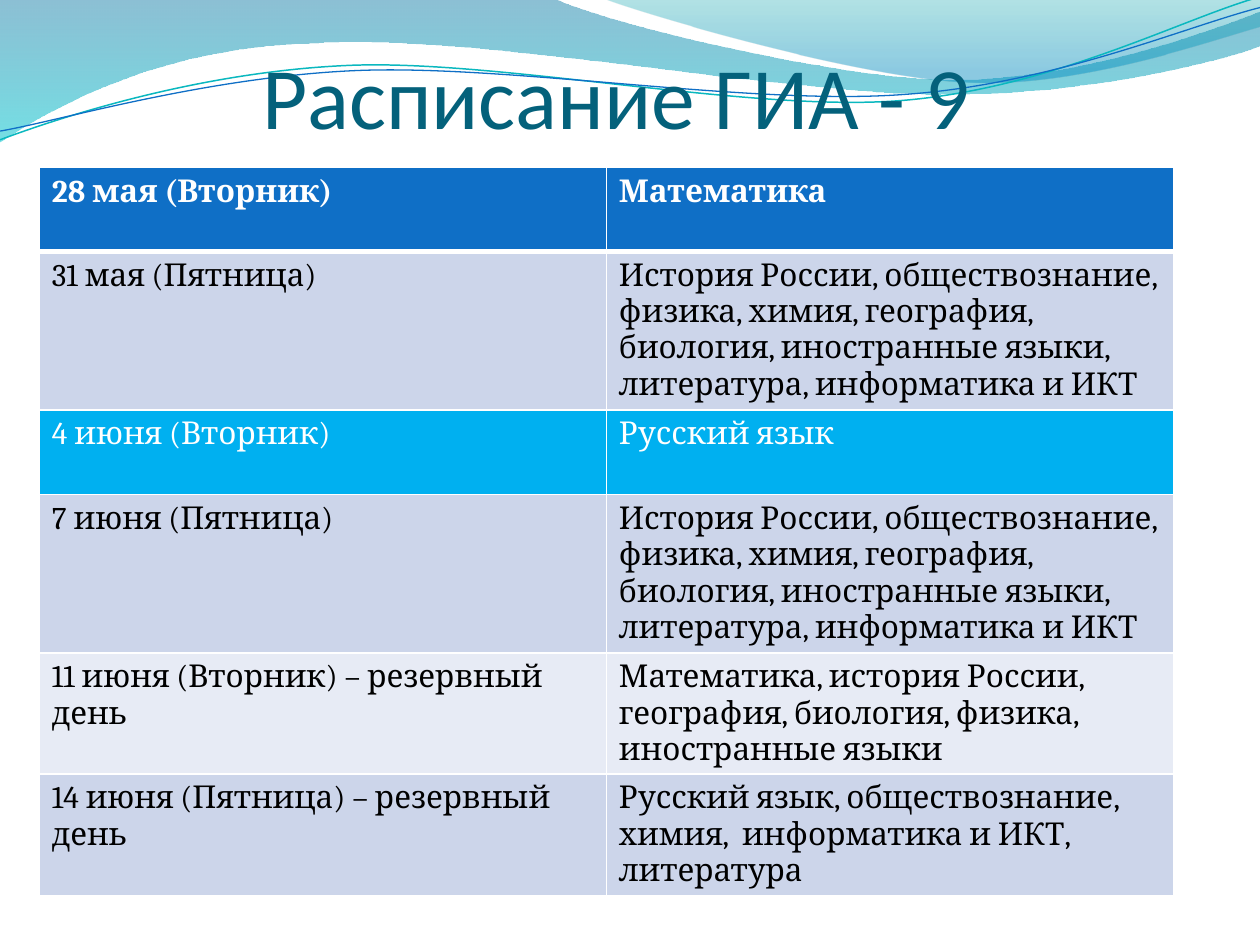
from pptx import Presentation
from pptx.dml.color import RGBColor
from pptx.enum.text import MSO_ANCHOR, PP_ALIGN
from pptx.oxml.ns import qn
from pptx.util import Pt
from lxml import etree

BOTTOM = MSO_ANCHOR.BOTTOM
CENTER = PP_ALIGN.CENTER
WHITE = RGBColor(0xFF, 0xFF, 0xFF)
BLACK = RGBColor(0, 0, 0)
BLUE = RGBColor(0x0F, 0x6F, 0xC6)
SKY = RGBColor(0x00, 0xB0, 0xF0)
PALE = RGBColor(0xCC, 0xD5, 0xEA)
LIGHT = RGBColor(0xE7, 0xEB, 0xF5)
TITLE = RGBColor(0x04, 0x61, 0x7B)
TEAL = RGBColor(0x0A, 0xB8, 0xBF)
DEEP = RGBColor(0x00, 0x74, 0xA1)
CYAN = RGBColor(0x00, 0xC6, 0xCF)
SEA = RGBColor(0x00, 0xA1, 0xA9)
AZURE = RGBColor(0x00, 0x8B, 0xBF)

deck = Presentation()
deck.slide_width, deck.slide_height = Pt(720), Pt(540)
slide = deck.slides.add_slide(deck.slide_layouts[6])
shapes = slide.shapes


def trace(start, parts, close):
    dots = [(Pt(x), Pt(y)) for part in parts for x, y in part]
    pen = shapes.build_freeform(Pt(start[0]), Pt(start[1]))
    pen.add_line_segments(dots, close=close)
    shape = pen.convert_to_shape()
    shape.shadow.inherit = False
    legs = iter(list(shape._element.spPr.iter(qn("a:lnTo"))))
    for part in parts:
        group = [next(legs) for dot in part]
        if len(group) == 3:
            bend = etree.Element(qn("a:cubicBezTo"))
            group[0].addprevious(bend)
            for leg in group:
                bend.append(leg[0])
                leg.getparent().remove(leg)
    return shape


waves = [
    ((0, 0), [
        [(316.8, -0.7)],
        [(342.7, 12.2), (478.1, 45.4), (545.8, 45.4)],
        [(614.2, 45.4), (689.8, 18.7), (720, 6.5)],
        [(720.7, 25.9)],
        [(707.8, 31.7), (626.4, 54.7), (537.1, 54)],
        [(447.8, 54), (275, 20.2), (185, 24.5)],
        [(92.9, 25.9), (33.1, 59.8), (-0.7, 81.4)],
        [(0, 0)],
    ], [(0, DEEP, 45), (1, CYAN, 55)]),
    ((344.9, -0.7), [
        [(366.5, 7.9), (491, 44.6), (553.7, 46.8)],
        [(616.3, 49.7), (691.9, 23), (720, 15.1)],
        [(720, 0)],
        [(344.9, -0.7)],
    ], [(0, SEA, 30), (0.8, AZURE, 45)]),
]
for start, parts, stops in waves:
    wave = trace(start, parts, True)
    wave.line.fill.background()
    wave.fill.gradient()
    wave.fill.gradient_angle = 270
    for stop, (place, color, alpha) in zip(wave.fill.gradient_stops, stops):
        stop.position = place
        stop.color.rgb = color
    for node, (place, color, alpha) in zip(wave._element.spPr.iter(qn("a:srgbClr")), stops):
        etree.SubElement(node, qn("a:alpha")).set("val", str(alpha * 1000))

curves = [
    ((0, 79.9), [
        [(34.6, 67), (113.8, 41), (199.4, 37.4)],
        [(284.4, 33.8), (427, 64.1), (513.4, 57.6)],
        [(599.8, 51.1), (675.4, 10.8), (718.6, -1.4)],
    ], TEAL, 0.85),
    ((0, 74.9), [
        [(33.8, 69.1), (118.1, 43.9), (203.8, 40.3)],
        [(290.2, 36.7), (429.8, 60.5), (516.2, 54)],
        [(601.9, 48.2), (677.5, 15.1), (720, 4.3)],
    ], BLUE, 0.75),
]
for start, parts, color, width in curves:
    curve = trace(start, parts, False)
    curve.fill.background()
    curve.line.color.rgb = color
    curve.line.width = Pt(width)

title = shapes.add_textbox(Pt(28.3), Pt(0), Pt(648), Pt(84.3))
frame = title.text_frame
frame.word_wrap = True
frame.vertical_anchor = BOTTOM
frame.margin_left = frame.margin_right = frame.margin_bottom = Pt(0)
frame.text = "Расписание ГИА - 9"
head = frame.paragraphs[0]
head.alignment = CENTER
font = head.runs[0].font
font.name, font.size = "Calibri", Pt(50)
font.color.rgb = TITLE

choice = ("История России, обществознание, физика, химия, география, "
          "биология, иностранные языки, литература, информатика и ИКТ")
rows = [
    ("28 мая (Вторник)", "Математика", BLUE, WHITE, 48),
    ("31 мая (Пятница)", choice, PALE, BLACK, 90.5),
    ("4 июня (Вторник)", "Русский язык", SKY, WHITE, 48.5),
    ("7 июня (Пятница)", choice, PALE, BLACK, 90.5),
    ("11 июня (Вторник) – резервный день",
     "Математика, история России, география, биология, физика, иностранные языки",
     LIGHT, BLACK, 69.25),
    ("14 июня (Пятница) – резервный день",
     "Русский язык, обществознание, химия,  информатика и ИКТ, литература",
     PALE, BLACK, 69.25),
]
table = shapes.add_table(len(rows), 2, Pt(22.5), Pt(95.75), Pt(648), Pt(416)).table
for i, (day, exams, fill, color, height) in enumerate(rows):
    table.rows[i].height = Pt(height)
    for cell, text in zip(table.rows[i].cells, (day, exams)):
        cell.margin_bottom = Pt(0)
        if i == 0:
            for side, width in (("L", 1), ("R", 1), ("T", 1), ("B", 3)):
                edge = etree.SubElement(cell._tc.get_or_add_tcPr(), qn("a:ln" + side))
                edge.set("w", str(Pt(width)))
                paint = etree.SubElement(edge, qn("a:solidFill"))
                etree.SubElement(paint, qn("a:srgbClr")).set("val", str(WHITE))
        cell.fill.solid()
        cell.fill.fore_color.rgb = fill
        cell.text_frame.text = text
        font = cell.text_frame.paragraphs[0].runs[0].font
        font.name, font.size, font.bold = "Cambria", Pt(18), i == 0
        font.color.rgb = color

deck.save("out.pptx")
